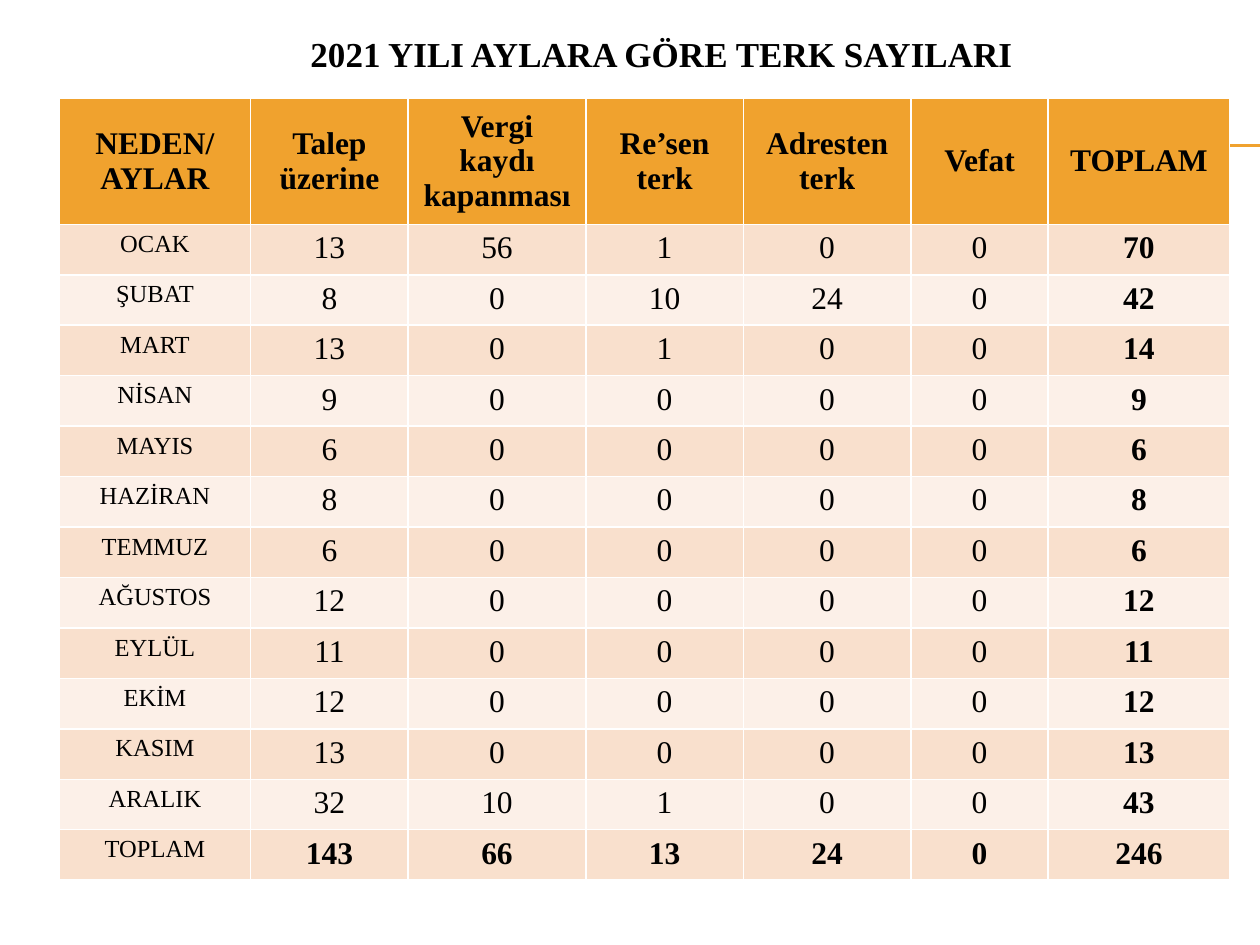
from dataclasses import dataclass

from lxml import etree
from pptx import Presentation
from pptx import util as u
from pptx.dml.color import RGBColor
from pptx.enum import shapes, text
from pptx.oxml.ns import qn


@dataclass(frozen=True)
class Theme:
    font: str = "Times New Roman"
    ink: str = "000000"
    accent: str = "F0A22E"
    bands: tuple = ("F9E0CD", "FCF0E8")
    title_size: int = 20
    body_size: int = 18
    month_size: int = 14
    rule_width: float = 0.75


THEME = Theme()
WIDTH, HEIGHT = u.Inches(10), u.Inches(7.5)

TITLE = "2021 YILI AYLARA GÖRE TERK SAYILARI"
HEADERS = ["NEDEN/ AYLAR", "Talep üzerine", "Vergi kaydı kapanması",
           "Re’sen terk", "Adresten terk", "Vefat", "TOPLAM"]
COLUMN_WIDTHS = [1.52, 1.25, 1.41, 1.25, 1.33, 1.09, 1.44]
HEADER_HEIGHT, ROW_HEIGHT = 0.99, 0.39

# Closures per month, in the order of the reason columns
CLOSURES = {
    "OCAK": [13, 56, 1, 0, 0],
    "ŞUBAT": [8, 0, 10, 24, 0],
    "MART": [13, 0, 1, 0, 0],
    "NİSAN": [9, 0, 0, 0, 0],
    "MAYIS": [6, 0, 0, 0, 0],
    "HAZİRAN": [8, 0, 0, 0, 0],
    "TEMMUZ": [6, 0, 0, 0, 0],
    "AĞUSTOS": [12, 0, 0, 0, 0],
    "EYLÜL": [11, 0, 0, 0, 0],
    "EKİM": [12, 0, 0, 0, 0],
    "KASIM": [13, 0, 0, 0, 0],
    "ARALIK": [32, 10, 1, 0, 0],
}


def write(text_frame, content, size, bold=False):
    text_frame.text = content
    paragraph = text_frame.paragraphs[0]
    paragraph.alignment = text.PP_ALIGN.CENTER
    font = paragraph.runs[0].font
    font.name, font.size, font.bold = THEME.font, u.Pt(size), bold
    font.color.rgb = RGBColor.from_string(THEME.ink)


def add_rule(slide, top):
    y = u.Inches(top)
    rule = slide.shapes.add_connector(
        shapes.MSO_CONNECTOR.STRAIGHT, u.Inches(0.56), y, WIDTH, y)
    rule.line.color.rgb = RGBColor.from_string(THEME.accent)
    rule.line.width = u.Pt(THEME.rule_width)
    etree.SubElement(rule._element.spPr, qn("a:effectLst"))


def add_title(slide):
    box = slide.shapes.add_textbox(
        u.Inches(0.5), u.Inches(0.21), u.Inches(9.5), u.Inches(0.57))
    box.text_frame.word_wrap = True
    write(box.text_frame, TITLE, THEME.title_size, bold=True)


def fill_cell(cell, content, color, size, bold):
    cell.fill.solid()
    cell.fill.fore_color.rgb = RGBColor.from_string(color)
    write(cell.text_frame, content, size, bold)


def add_closure_table(slide):
    # Totals follow from the monthly counts
    rows = [[month, *counts, sum(counts)] for month, counts in CLOSURES.items()]
    totals = [sum(column) for column in zip(*CLOSURES.values())]
    rows.append(["TOPLAM", *totals, sum(totals)])

    frame = slide.shapes.add_table(
        len(rows) + 1, len(HEADERS), u.Inches(0.47), u.Inches(0.78),
        u.Inches(sum(COLUMN_WIDTHS)),
        u.Inches(HEADER_HEIGHT + ROW_HEIGHT * len(rows)))
    table = frame.table
    for column, width in zip(table.columns, COLUMN_WIDTHS):
        column.width = u.Inches(width)
    for index, row in enumerate(table.rows):
        row.height = u.Inches(ROW_HEIGHT if index else HEADER_HEIGHT)

    # Header row
    for cell, header in zip(table.rows[0].cells, HEADERS):
        fill_cell(cell, header, THEME.accent, THEME.body_size, True)
        cell.vertical_anchor = text.MSO_ANCHOR.MIDDLE

    # Months and the closing total, on alternating bands
    last_row, last_column = len(rows), len(HEADERS) - 1
    for r, values in enumerate(rows, start=1):
        color = THEME.bands[(r - 1) % 2]
        for c, value in enumerate(values):
            size = THEME.body_size if c else THEME.month_size
            bold = c == last_column or (r == last_row and c > 0)
            fill_cell(table.cell(r, c), str(value), color, size, bold)


def main():
    presentation = Presentation()
    presentation.slide_width, presentation.slide_height = WIDTH, HEIGHT
    slide = presentation.slides.add_slide(presentation.slide_layouts[6])
    # Double rule behind the table
    for top in (1.15, 1.16):
        add_rule(slide, top)
    add_title(slide)
    add_closure_table(slide)
    presentation.save("out.pptx")


if __name__ == "__main__":
    main()
